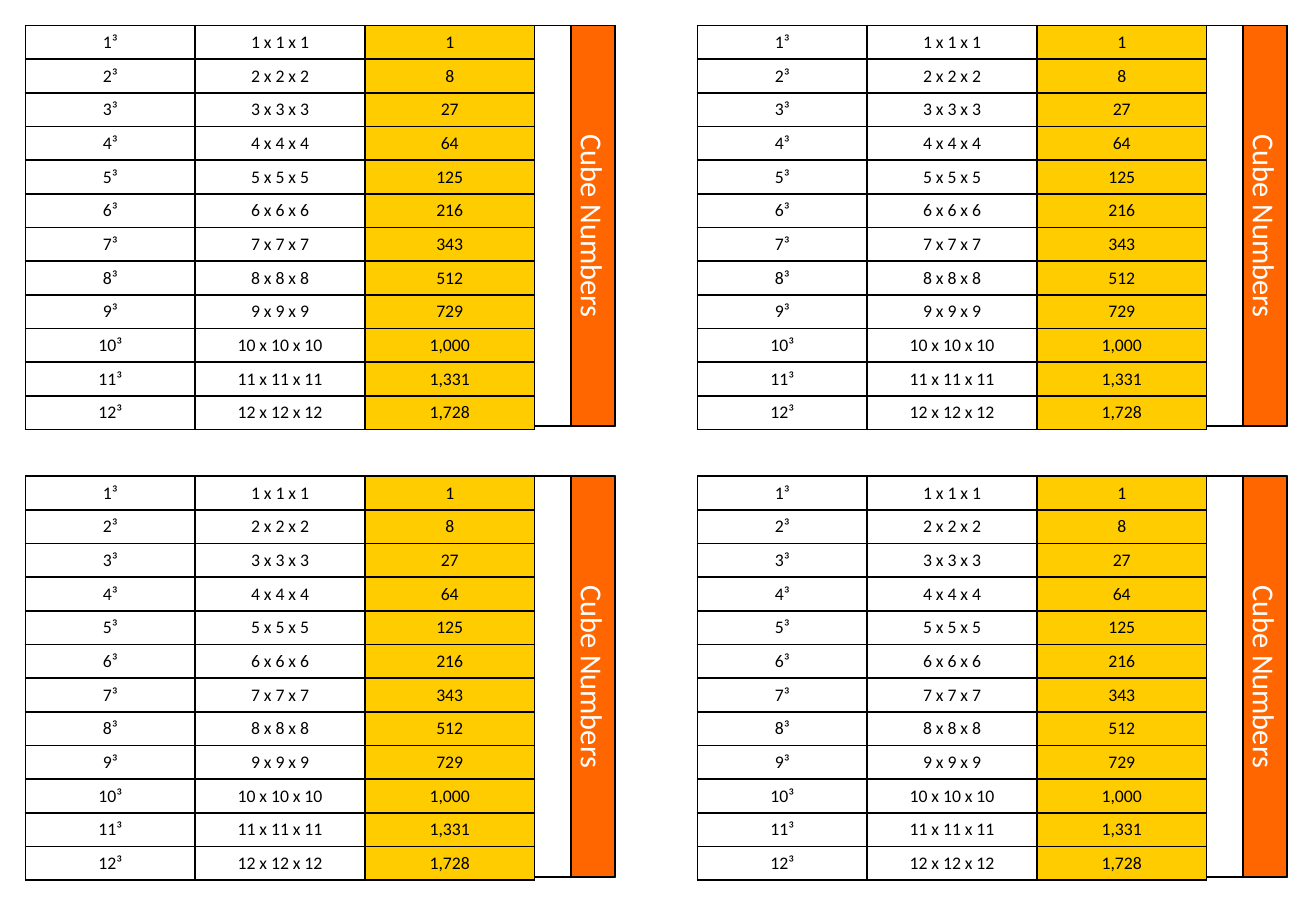
from lxml import etree
from pptx import Presentation
from pptx.dml.color import RGBColor
from pptx.enum.shapes import MSO_SHAPE
from pptx.enum.text import MSO_ANCHOR, PP_ALIGN
from pptx.oxml.ns import qn
from pptx.util import Inches, Pt

RECTANGLE = MSO_SHAPE.RECTANGLE
MIDDLE = MSO_ANCHOR.MIDDLE
CENTER = PP_ALIGN.CENTER

# Content
TITLE = "Cube Numbers"
ROWS = [(f"{n}³", f"{n} x {n} x {n}", f"{n ** 3:,}") for n in range(1, 13)]

# Style
COLORS = {"white": "FFFFFF", "black": "000000", "answer": "FFCC00", "banner": "FF6600"}
COLUMN_FILLS = ("white", "white", "answer")
FONT = "Calibri"
LINE_WIDTH = Pt(1)

# Layout in inches: four equal cards in a two by two grid
MARGIN = 0.21
CARD_WIDTH, CARD_HEIGHT = 4.85, 3.3
STEP_X, STEP_Y = 5.53, 3.71
TABLE_WIDTH = 4.19
BANNER_WIDTH = 0.36


def color(name):
    return RGBColor.from_string(COLORS[name])


def format_text(text_frame, text, size, color_name):
    text_frame.text = text
    paragraph = text_frame.paragraphs[0]
    paragraph.alignment = CENTER
    paragraph.font.name = FONT
    paragraph.font.size = Pt(size)
    paragraph.font.color.rgb = color(color_name)


def add_rectangle(slide, left, top, width, height, fill):
    shape = slide.shapes.add_shape(
        RECTANGLE, Inches(left), Inches(top), Inches(width), Inches(height))
    shape.shadow.inherit = False
    shape.fill.solid()
    shape.fill.fore_color.rgb = color(fill)
    shape.line.color.rgb = color("black")
    shape.line.width = LINE_WIDTH
    return shape


def add_borders(cell):
    properties = cell._tc.get_or_add_tcPr()
    for side in ("a:lnL", "a:lnR", "a:lnT", "a:lnB"):
        line = etree.SubElement(properties, qn(side), w=str(LINE_WIDTH))
        fill = etree.SubElement(line, qn("a:solidFill"))
        etree.SubElement(fill, qn("a:srgbClr"), val=COLORS["black"])


def add_cube_table(slide, left, top):
    table = slide.shapes.add_table(
        len(ROWS), len(COLUMN_FILLS), Inches(left), Inches(top),
        Inches(TABLE_WIDTH), Inches(CARD_HEIGHT)).table
    table.first_row = False
    table.horz_banding = False
    for row_index, row in enumerate(ROWS):
        for column_index, (text, fill) in enumerate(zip(row, COLUMN_FILLS)):
            cell = table.cell(row_index, column_index)
            add_borders(cell)
            cell.fill.solid()
            cell.fill.fore_color.rgb = color(fill)
            cell.vertical_anchor = MIDDLE
            format_text(cell.text_frame, text, 10.5, "black")


def add_banner(slide, card_left, card_top):
    # The banner is turned about its centre to stand on the card's right edge
    center_x = card_left + CARD_WIDTH - BANNER_WIDTH / 2
    center_y = card_top + CARD_HEIGHT / 2
    banner = add_rectangle(
        slide, center_x - CARD_HEIGHT / 2, center_y - BANNER_WIDTH / 2,
        CARD_HEIGHT, BANNER_WIDTH, "banner")
    banner.rotation = 90
    banner.text_frame.vertical_anchor = MIDDLE
    format_text(banner.text_frame, TITLE, 18, "white")


def main():
    presentation = Presentation()
    presentation.slide_width = Inches(10.83)
    presentation.slide_height = Inches(7.5)
    slide = presentation.slides.add_slide(presentation.slide_layouts[6])

    for grid_row in range(2):
        for grid_column in range(2):
            left = MARGIN + grid_column * STEP_X
            top = MARGIN + grid_row * STEP_Y
            add_rectangle(slide, left, top, CARD_WIDTH, CARD_HEIGHT, "white")
            add_cube_table(slide, left, top)
            add_banner(slide, left, top)

    presentation.save("out.pptx")


if __name__ == "__main__":
    main()
